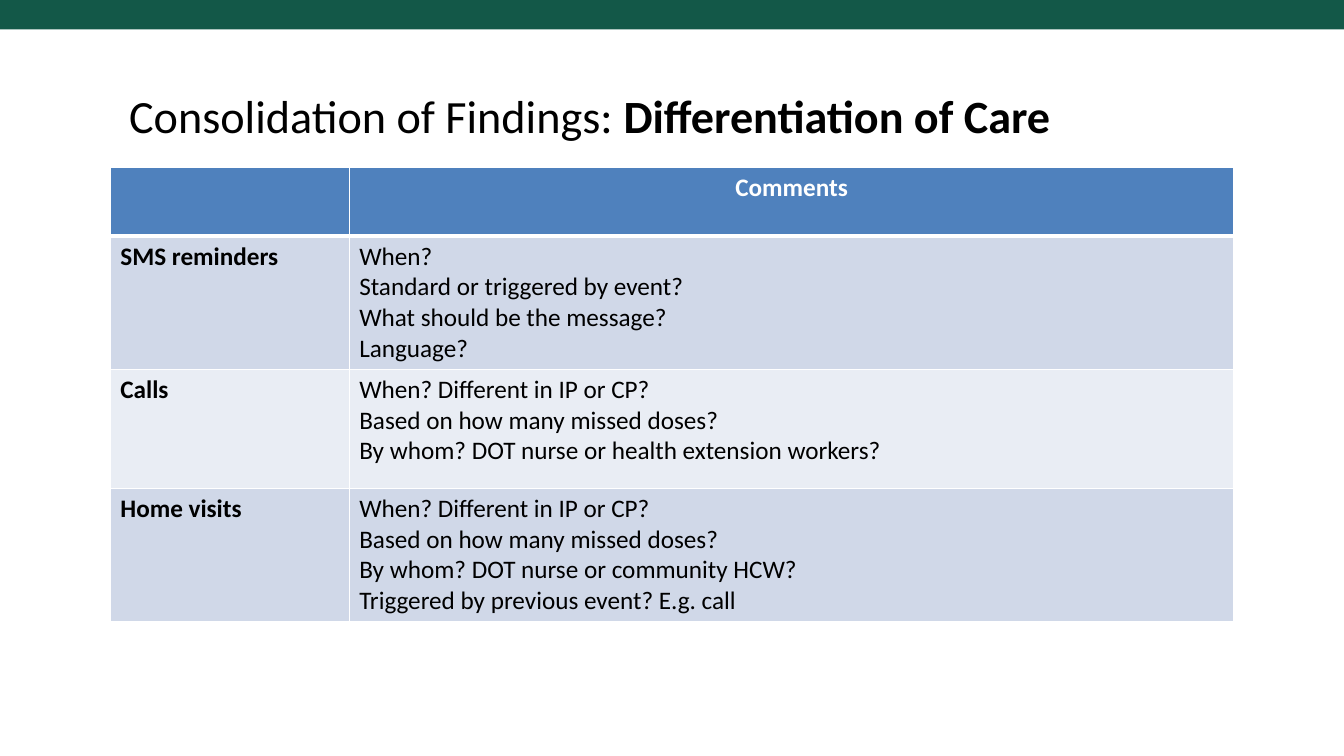
import pptx
import pptx.util
import pptx.dml.color
import pptx.enum.shapes
import pptx.enum.text
import pptx.oxml
import pptx.oxml.ns

Cm, Pt = pptx.util.Cm, pptx.util.Pt
COLOURS = {"band": "135848", "header": "4F81BD", "odd": "D0D8E8",
           "even": "E9EDF4", "white": "FFFFFF", "black": "000000"}
ROWS = [
    ("", ["Comments"]),
    ("SMS reminders", ["When?", "Standard or triggered by event?",
                       "What should be the message?", "Language?"]),
    ("Calls", ["When? Different in IP or CP?", "Based on how many missed doses?",
               "By whom? DOT nurse or health extension workers?"]),
    ("Home visits", ["When? Different in IP or CP?", "Based on how many missed doses?",
                     "By whom? DOT nurse or community HCW?",
                     "Triggered by previous event? E.g. call"]),
]


def add_span(para, text, colour, **font_format):
    span = para.add_run()
    span.text = text
    span.font.color.rgb = pptx.dml.color.RGBColor.from_string(COLOURS[colour])
    for name, value in {"name": "Calibri", **font_format}.items():
        setattr(span.font, name, value)


def add_border(cell, side, width):
    cell.fill.background()
    properties = cell._tc.get_or_add_tcPr()
    line = pptx.oxml.parse_xml(
        f'<a:{side} {pptx.oxml.ns.nsdecls("a")} w="{Pt(width)}"><a:solidFill>'
        f'<a:srgbClr val="{COLOURS["white"]}"/></a:solidFill></a:{side}>')
    properties.insert(len(properties) - 1, line)


deck = pptx.Presentation()
deck.slide_width, deck.slide_height = Cm(33.87), Cm(19.05)
page = deck.slides.add_slide(deck.slide_layouts[5])

# Top band
band = page.shapes.add_shape(pptx.enum.shapes.MSO_SHAPE.RECTANGLE,
                             0, 0, deck.slide_width, Cm(0.74))
band.shadow.inherit = False
band.fill.solid()
band.fill.fore_color.rgb = pptx.dml.color.RGBColor.from_string(COLOURS["band"])
band.line.fill.background()

# Title
title = page.shapes.title
title_place = {"left": Cm(3), "top": Cm(2.14), "width": Cm(26.67), "height": Cm(1.68)}
for name, value in title_place.items():
    setattr(title, name, value)
title.text_frame.vertical_anchor = pptx.enum.text.MSO_ANCHOR.MIDDLE
para = title.text_frame.paragraphs[0]
para.alignment = pptx.enum.text.PP_ALIGN.LEFT
para.line_spacing = 0.89
add_span(para, "Consolidation of Findings: ", "black", size=Pt(33), bold=False)
add_span(para, "Differentiation of Care", "black", size=Pt(33), bold=True)

# Table of comments
table = page.shapes.add_table(len(ROWS), 2, Cm(2.78), Cm(4.22), Cm(28.32), Cm(11.4)).table
for column, width in zip(table.columns, (6.02, 22.3)):
    column.width = Cm(width)
for row, height in zip(table.rows, (1.73, 3.33, 3, 3.33)):
    row.height = Cm(height)

for row_index, (topic, comments) in enumerate(ROWS):
    is_header = row_index == 0
    fill = "header" if is_header else ("even", "odd")[row_index % 2]
    for column_index, lines in enumerate(([topic], comments)):
        cell = table.cell(row_index, column_index)
        borders = {"lnL": 1, "lnR": 1, "lnT": 3 if row_index == 1 else 1,
                   "lnB": 3 if is_header else 1}
        for side, width in borders.items():
            add_border(cell, side, width)
        cell.fill.solid()
        cell.fill.fore_color.rgb = pptx.dml.color.RGBColor.from_string(COLOURS[fill])
        for line_index, text in enumerate(lines):
            box = cell.text_frame
            para = box.add_paragraph() if line_index else box.paragraphs[0]
            if is_header:
                para.alignment = pptx.enum.text.PP_ALIGN.CENTER
            if text:
                add_span(para, text, "white" if is_header else "black",
                         size=Pt(18), bold=is_header or column_index == 0)

deck.save("out.pptx")
